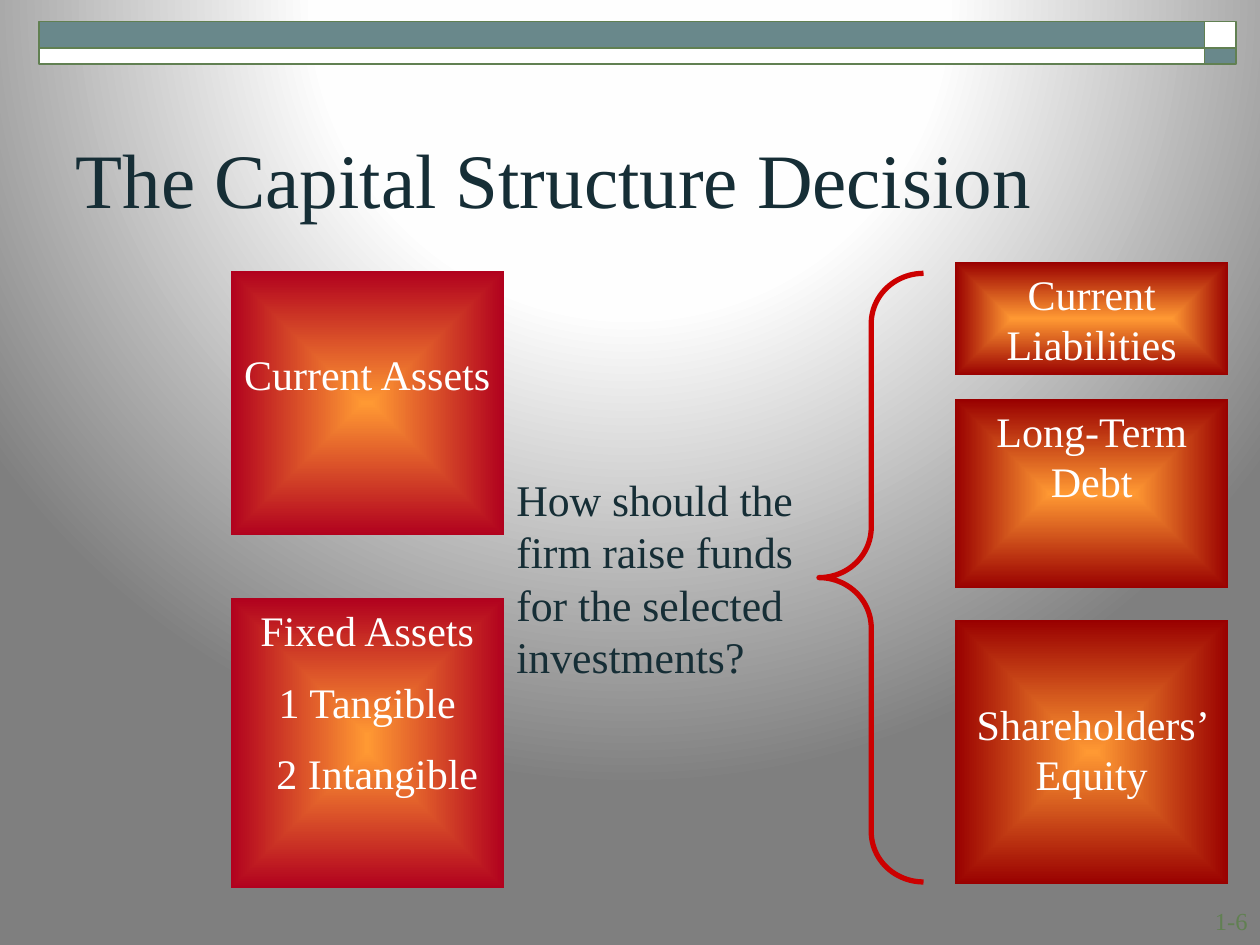
from dataclasses import dataclass

from lxml.etree import SubElement
from pptx import Presentation
from pptx.dml.color import RGBColor
from pptx.enum.shapes import MSO_SHAPE as Preset
from pptx.enum.text import MSO_ANCHOR as Anchor, PP_ALIGN as Align
from pptx.oxml.ns import qn
from pptx.util import Inches, Pt

FONT = "Times New Roman"
COLORS = {
    "white": "FFFFFF",
    "near_white": "FEFEFE",
    "gray": "7F7F7F",
    "teal": "69888B",
    "green": "618052",
    "ink": "162E36",
    "orange": "FF9933",
    "crimson": "B1011E",
    "maroon": "990000",
    "brace": "CC0000",
}


@dataclass(frozen=True)
class BalanceBox:
    """A block of the balance sheet."""

    lines: tuple[str, ...]
    left: float
    top: float
    height: float
    edge: str
    top_margin: float = 0.05


@dataclass(frozen=True)
class BandCell:
    """A cell of the header band."""

    left: float
    top: float
    width: float
    height: float
    color: str


BOX_WIDTH = 2.17
ASSETS_LEFT, FUNDING_LEFT = 1.83, 7.58
BOXES = (
    BalanceBox(("Current Assets",), ASSETS_LEFT, 2.15, 2.1, "crimson", 0.62),
    BalanceBox(("Fixed Assets", "1 Tangible", "2 Intangible"), ASSETS_LEFT, 4.75, 2.3, "crimson"),
    BalanceBox(("Shareholders’ Equity",), FUNDING_LEFT, 4.92, 2.1, "maroon", 0.62),
    BalanceBox(("Current Liabilities",), FUNDING_LEFT, 2.08, 0.9, "maroon"),
    BalanceBox(("Long-Term Debt",), FUNDING_LEFT, 3.17, 1.5, "maroon"),
)
BAND = (
    BandCell(9.56, 0.17, 0.25, 0.22, "white"),
    BandCell(0.31, 0.17, 9.25, 0.22, "teal"),
    BandCell(0.31, 0.38, 9.25, 0.13, "white"),
    BandCell(9.56, 0.38, 0.25, 0.13, "teal"),
)


def rgb(name: str) -> RGBColor:
    """Return a named palette colour."""
    return RGBColor.from_string(COLORS[name])


def set_path_gradient(owner, fill, kind: str, stops: dict[int, str], focus: tuple[int, ...]) -> None:
    """Give a fill a path gradient; stops and focus are percentages."""
    fill.gradient()
    gradient = owner.find(".//" + qn("a:gradFill"))
    for child in list(gradient):
        gradient.remove(child)
    stop_list = SubElement(gradient, qn("a:gsLst"))
    for position, color in stops.items():
        stop = SubElement(stop_list, qn("a:gs"), pos=str(position * 1000))
        SubElement(stop, qn("a:srgbClr"), val=COLORS[color])
    outline = SubElement(gradient, qn("a:path"))
    outline.set("path", kind)
    sides = {side: str(value * 1000) for side, value in zip("ltrb", focus)}
    SubElement(outline, qn("a:fillToRect"), sides)


def add_run(paragraph, text: str, size: float, color: str) -> None:
    """Append a formatted run."""
    run = paragraph.add_run()
    run.text = text
    run.font.name = FONT
    run.font.size = Pt(size)
    run.font.color.rgb = rgb(color)


def add_preset(slide, preset: Preset, left: float, top: float, width: float, height: float):
    """Add a preset shape without shadow."""
    shape = slide.shapes.add_shape(preset, Inches(left), Inches(top), Inches(width), Inches(height))
    shape.shadow.inherit = False
    return shape


def add_label(slide, text: str, left: float, top: float, width: float, height: float,
              size: float, color: str, align: Align) -> None:
    """Add a wrapped text box."""
    label = slide.shapes.add_textbox(Inches(left), Inches(top), Inches(width), Inches(height))
    label.text_frame.word_wrap = True
    paragraph = label.text_frame.paragraphs[0]
    paragraph.alignment = align
    add_run(paragraph, text, size, color)


def add_band_cell(slide, cell: BandCell) -> None:
    """Draw one cell of the header band."""
    shape = add_preset(slide, Preset.RECTANGLE, cell.left, cell.top, cell.width, cell.height)
    shape.fill.solid()
    shape.fill.fore_color.rgb = rgb(cell.color)
    shape.line.color.rgb = rgb("green")
    shape.line.width = Pt(1)


def add_balance_box(slide, box: BalanceBox) -> None:
    """Draw one gradient block with its lines of text."""
    shape = add_preset(slide, Preset.RECTANGLE, box.left, box.top, BOX_WIDTH, box.height)
    set_path_gradient(shape.element, shape.fill, "shape", {0: "orange", 100: box.edge}, (50, 50, 50, 50))
    shape.line.fill.background()
    frame = shape.text_frame
    frame.word_wrap = True
    frame.vertical_anchor = Anchor.TOP
    frame.margin_top = Inches(box.top_margin)
    for index, text in enumerate(box.lines):
        paragraph = frame.add_paragraph() if index else frame.paragraphs[0]
        paragraph.alignment = Align.CENTER
        if index:
            paragraph.space_before = Pt(12)
        if text == "2 Intangible":
            paragraph._p.get_or_add_pPr().set("marL", str(Inches(0.16)))
        add_run(paragraph, text, 24, "white")


def add_brace(slide) -> None:
    """Draw the brace that gathers the sources of funds."""
    brace = add_preset(slide, Preset.LEFT_BRACE, 6.5, 2.17, 0.83, 4.83)
    brace.adjustments[0] = 0.48
    brace.adjustments[1] = 0.5
    brace.fill.background()
    brace.line.color.rgb = rgb("brace")
    brace.line.width = Pt(3)


def set_title(slide, text: str) -> None:
    """Place and fill the title placeholder."""
    title = slide.shapes.title
    title.left, title.top, title.width, title.height = map(Inches, (0.5, 0.58, 9, 1.25))
    title.text_frame.vertical_anchor = Anchor.BOTTOM
    paragraph = title.text_frame.paragraphs[0]
    paragraph.alignment = Align.LEFT
    add_run(paragraph, text, 44, "ink")


def main() -> None:
    """Build and save the slide."""
    presentation = Presentation()
    presentation.slide_width, presentation.slide_height = Inches(10), Inches(7.5)
    slide = presentation.slides.add_slide(presentation.slide_layouts[5])
    set_path_gradient(slide.element, slide.background.fill, "circle",
                      {0: "white", 40: "near_white", 100: "gray"}, (50, -80, 50, 180))
    for cell in BAND:
        add_band_cell(slide, cell)
    set_title(slide, "The Capital Structure Decision")
    add_label(slide, "How should the firm raise funds for the selected investments?",
              4, 3.7, 2.67, 1.77, 25, "ink", Align.LEFT)
    add_brace(slide)
    for box in BOXES:
        add_balance_box(slide, box)
    add_label(slide, "1-6", 9, 7.14, 1, 0.32, 14, "green", Align.RIGHT)
    presentation.save("out.pptx")


if __name__ == "__main__":
    main()
